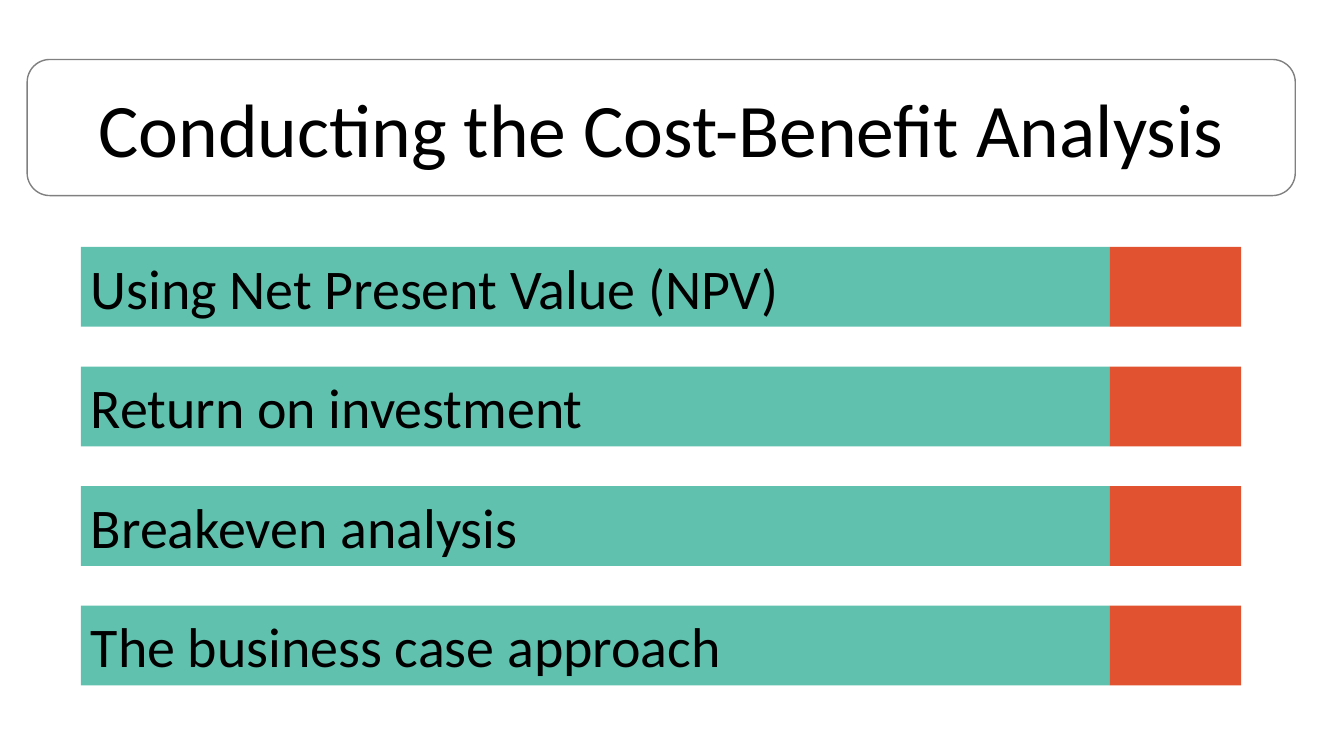
from pptx import Presentation
from pptx.dml.color import RGBColor as Rgb
from pptx.enum.shapes import MSO_SHAPE as Shape
from pptx.enum.text import MSO_ANCHOR as Anchor, PP_ALIGN as Align
from pptx.util import Pt

COLORS = {
    "white": "FFFFFF",
    "black": "000000",
    "gray": "808080",
    "teal": "60C1AE",
    "orange": "E15230",
}
TOPICS = [
    "Using Net Present Value (NPV)",
    "Return on investment",
    "Breakeven analysis",
    "The business case approach",
]

# Topic bars, in points
BAR_LEFT, BAR_TOP = 57.8, 176.4
BAR_WIDTH, BAR_HEIGHT, BAR_PITCH = 735, 57, 85.4
TAB_WIDTH = 93.8


def color(name):
    return Rgb.from_string(COLORS[name])


def write(box, text, size, align=Align.LEFT, ink="black", font="Calibri"):
    frame = box.text_frame
    frame.word_wrap = True
    frame.vertical_anchor = Anchor.MIDDLE
    para = frame.paragraphs[0]
    para.alignment = align
    span = para.add_run()
    span.text = text
    span.font.name = font
    span.font.size = Pt(size)
    span.font.color.rgb = color(ink)


class SlideBuilder:
    def __init__(self, page):
        self.page = page
        self.title_size = 54
        self.topic_size = 40

    def box(self, shapes, kind, left, top, width, height, fill, line=None):
        box = shapes.add_shape(kind, Pt(left), Pt(top), Pt(width), Pt(height))
        box.shadow.inherit = False
        box.fill.solid()
        box.fill.fore_color.rgb = color(fill)
        if line:
            box.line.color.rgb = color(line)
            box.line.width = Pt(1)
        else:
            box.line.fill.background()
        return box

    def title(self, text, left, top, width, height):
        box = self.box(self.page.shapes, Shape.ROUNDED_RECTANGLE,
                       left, top, width, height, "white", "gray")
        write(box, text, self.title_size, Align.CENTER)

    def topic(self, text, top):
        shapes = self.page.shapes.add_group_shape().shapes
        bar = self.box(shapes, Shape.RECTANGLE, BAR_LEFT, top,
                       BAR_WIDTH, BAR_HEIGHT, "teal")
        write(bar, text, self.topic_size)
        self.box(shapes, Shape.RECTANGLE, BAR_LEFT + BAR_WIDTH, top,
                 TAB_WIDTH, BAR_HEIGHT, "orange")


def main():
    deck = Presentation()
    deck.slide_width, deck.slide_height = Pt(960), Pt(540)
    builder = SlideBuilder(deck.slides.add_slide(deck.slide_layouts[6]))

    # Title
    builder.title("Conducting the Cost-Benefit Analysis", 19.4, 42.5, 905.8, 97.2)

    # Topics
    for row, text in enumerate(TOPICS):
        builder.topic(text, BAR_TOP + row * BAR_PITCH)

    deck.save("out.pptx")


if __name__ == "__main__":
    main()
